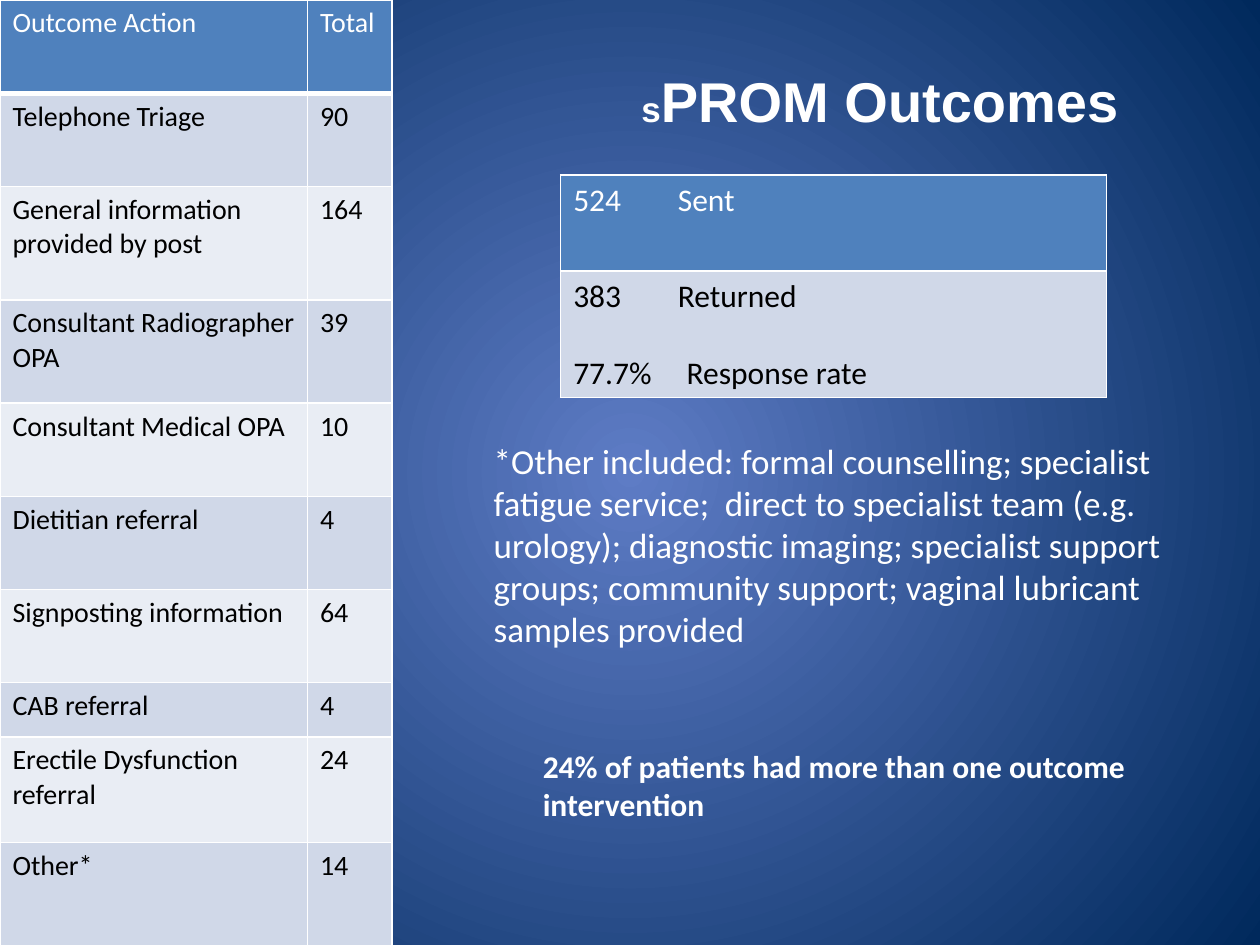
from lxml.etree import SubElement
from pptx import Presentation
from pptx.dml.color import RGBColor
from pptx.enum.text import MSO_ANCHOR, PP_ALIGN
from pptx.oxml import parse_xml
from pptx.oxml.ns import nsdecls, qn
from pptx.util import Inches, Pt

WHITE = RGBColor(0xFF, 0xFF, 0xFF)
BLACK = RGBColor(0, 0, 0)
HEADER_BLUE = RGBColor(0x4F, 0x81, 0xBD)
BAND_DARK = RGBColor(0xD0, 0xD8, 0xE8)
BAND_LIGHT = RGBColor(0xE9, 0xED, 0xF4)
GLOW_BLUE = RGBColor(0x5E, 0x7C, 0xC5)
NIGHT_BLUE = RGBColor(0x00, 0x29, 0x5C)


class SlideBuilder:
    """Holds the body style and the page being filled."""

    font = "Calibri"

    def __init__(self, page):
        self.page = page

    def background(self, inner, outer):
        self.page.background.fill.solid()
        properties = self.page._element.cSld.find(qn("p:bg")).find(qn("p:bgPr"))
        properties.replace(properties[0], parse_xml(
            f'<a:gradFill {nsdecls("a")} rotWithShape="1"><a:gsLst>'
            f'<a:gs pos="0"><a:srgbClr val="{inner}"/></a:gs>'
            f'<a:gs pos="100000"><a:srgbClr val="{outer}"/></a:gs></a:gsLst>'
            '<a:path path="circle"><a:fillToRect l="50000" t="50000" r="50000" b="50000"/>'
            '</a:path></a:gradFill>'))

    def run(self, para, text, size, color=WHITE, bold=False, font=None):
        span = para.add_run()
        span.text = text
        span.font.name = font or self.font
        span.font.size = Pt(size)
        span.font.bold = bold
        span.font.color.rgb = color

    def text_box(self, left, top, width, height):
        box = self.page.shapes.add_textbox(
            Inches(left), Inches(top), Inches(width), Inches(height))
        box.text_frame.word_wrap = True
        return box.text_frame

    def table(self, left, top, widths, heights):
        table = self.page.shapes.add_table(
            len(heights), len(widths), Inches(left), Inches(top),
            Inches(sum(widths)), Inches(sum(heights))).table
        table.first_row = table.horz_banding = False
        for column, width in zip(table.columns, widths):
            column.width = Inches(width)
        for row, height in zip(table.rows, heights):
            row.height = Inches(height)
        return table

    def cell(self, cell, fill, bottom=1):
        """Fills and borders a cell, and returns its first paragraph."""
        cell.fill.solid()
        cell.fill.fore_color.rgb = fill
        properties = cell._tc.get_or_add_tcPr()
        for index, side in enumerate("LRTB"):
            weight = Pt(bottom if side == "B" else 1)
            properties.insert(index, parse_xml(
                f'<a:ln{side} {nsdecls("a")} w="{weight}"><a:solidFill>'
                f'<a:srgbClr val="{WHITE}"/></a:solidFill></a:ln{side}>'))
        return cell.text_frame.paragraphs[0]

    def tab_stop(self, para, position):
        stops = SubElement(para._p.get_or_add_pPr(), qn("a:tabLst"))
        SubElement(stops, qn("a:tab"), pos=str(Inches(position)), algn="l")


OUTCOMES = [
    # action, total, row height
    ("Outcome Action", "Total", 0.74),
    ("Telephone Triage", "90", 0.74),
    ("General information provided by post", "164", 0.9),
    ("Consultant Radiographer OPA", "39", 0.82),
    ("Consultant Medical OPA", "10", 0.74),
    ("Dietitian referral", "4", 0.74),
    ("Signposting information", "64", 0.74),
    ("CAB referral", "4", 0.43),
    ("Erectile Dysfunction referral", "24", 0.84),
    ("Other*", "14", 0.83),
]


def main():
    deck = Presentation()
    deck.slide_width, deck.slide_height = Inches(10), Inches(7.5)
    builder = SlideBuilder(deck.slides.add_slide(deck.slide_layouts[6]))
    builder.background(GLOW_BLUE, NIGHT_BLUE)

    # Title
    title = builder.text_box(4.73, 0.21, 4.51, 1.17)
    title.vertical_anchor = MSO_ANCHOR.MIDDLE
    para = title.paragraphs[0]
    para.alignment = PP_ALIGN.CENTER
    builder.run(para, "s", 20, bold=True, font="Arial")
    builder.run(para, "PROM Outcomes", 32, bold=True, font="Arial")

    # Outcome table
    outcomes = builder.table(0, 0, [2.44, 0.67], [height for *_, height in OUTCOMES])
    for row, (action, total, _) in enumerate(OUTCOMES):
        header = row == 0
        fill = HEADER_BLUE if header else (BAND_LIGHT, BAND_DARK)[row % 2]
        for column, text in enumerate((action, total)):
            para = builder.cell(outcomes.cell(row, column), fill, 3 if header else 1)
            builder.run(para, text, 16, WHITE if header else BLACK)

    # Explanation of the "Other" row
    note = builder.text_box(3.82, 3.44, 6.02, 1.78)
    builder.run(note.paragraphs[0],
                "*Other included: formal counselling; specialist fatigue service;  "
                "direct to specialist team (e.g. urology); diagnostic imaging; "
                "specialist support groups; community support; vaginal lubricant "
                "samples provided", 20)

    # Response table
    responses = builder.table(4.45, 1.39, [4.33], [0.76, 1])
    sent = builder.cell(responses.cell(0, 0), HEADER_BLUE)
    returned = builder.cell(responses.cell(1, 0), BAND_DARK)
    rate = responses.cell(1, 0).text_frame.add_paragraph()
    rate.space_before = Pt(22)
    for para, figure, label, color, stop in (
            (sent, "524", "Sent", WHITE, 0.83),
            (returned, "383", "Returned", BLACK, 0.83),
            (rate, "77.7%", "Response rate", BLACK, 0.9)):
        builder.tab_stop(para, stop)
        builder.run(para, f"{figure}\t{label}", 18, color)

    # Closing remark
    remark = builder.text_box(4.21, 5.88, 5, 0.71)
    builder.run(remark.paragraphs[0],
                "24% of patients had more than one outcome intervention", 18, bold=True)

    deck.save("out.pptx")


if __name__ == "__main__":
    main()
